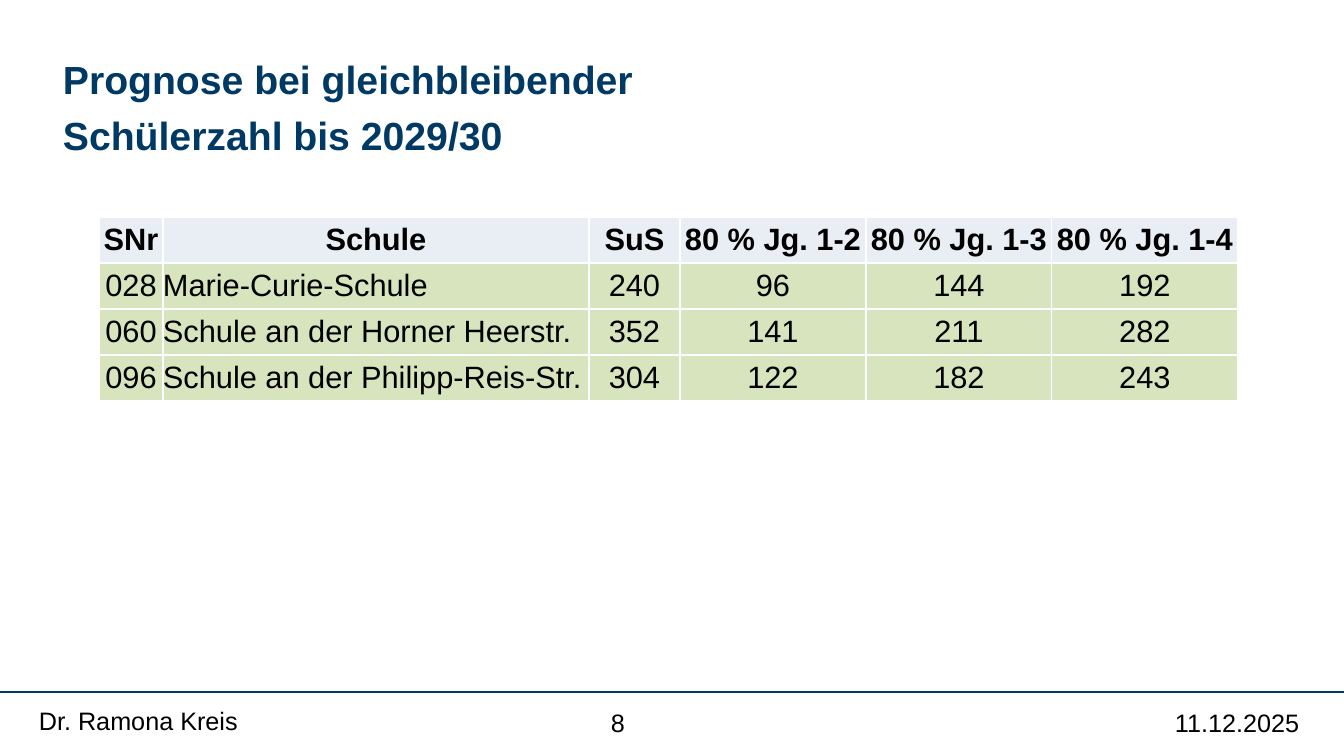
from lxml import etree
from pptx import Presentation
from pptx import util as u
from pptx.dml.color import RGBColor
from pptx.enum import shapes, text
from pptx.oxml import ns

PX = 914400 / 100.8
COLORS = {"navy": "003964", "black": "000000", "white": "FFFFFF",
          "header": "E9EDF4", "green": "D7E4BD"}


def px(value):
    return u.Emu(round(value * PX))


def write(frame, content, size=18, color="black", bold=False, align=text.PP_ALIGN.LEFT, gap=0):
    for index, line in enumerate(content.split("\n")):
        paragraph = frame.add_paragraph() if index else frame.paragraphs[0]
        paragraph.alignment = align
        if index:
            paragraph.space_before = u.Pt(gap)
        run = paragraph.add_run()
        run.text = line
        run.font.name = "Arial"
        run.font.size = u.Pt(size)
        run.font.bold = bold
        run.font.color.rgb = RGBColor.from_string(COLORS[color])


presentation = Presentation()
presentation.slide_width, presentation.slide_height = px(1344), px(756)
slide = presentation.slides.add_slide(presentation.slide_layouts[6])

footer_line = slide.shapes.add_connector(
    shapes.MSO_CONNECTOR.STRAIGHT, px(0), px(692), px(1344), px(692))
footer_line.line.color.rgb = RGBColor.from_string(COLORS["navy"])
footer_line.line.width = u.Pt(1)
etree.SubElement(footer_line._element.spPr, ns.qn("a:effectLst"))

title_format = {"size": 28, "color": "navy", "bold": True, "gap": 6.5}
text_boxes = [
    ("11.12.2025", (1165, 702, 161, 44), True, {}),
    ("8", (601, 702, 70, 40), False, {}),
    ("Dr. Ramona Kreis", (29, 700, 310, 44), True, {}),
    ("Prognose bei gleichbleibender\nSchülerzahl bis 2029/30", (53, 50, 830, 61), True, title_format),
]
for content, bounds, wrap, text_format in text_boxes:
    box = slide.shapes.add_textbox(*map(px, bounds))
    box.text_frame.word_wrap = wrap
    write(box.text_frame, content, **text_format)

school_rows = [
    ["SNr", "Schule", "SuS", "80 % Jg. 1-2", "80 % Jg. 1-3", "80 % Jg. 1-4"],
    ["028", "Marie-Curie-Schule", "240", "96", "144", "192"],
    ["060", "Schule an der Horner Heerstr.", "352", "141", "211", "282"],
    ["096", "Schule an der Philipp-Reis-Str.", "304", "122", "182", "243"],
]
column_widths = [64, 426, 91, 186, 186, 186]
row_height = 46
table = slide.shapes.add_table(
    len(school_rows), len(column_widths), px(99), px(217),
    px(sum(column_widths)), px(row_height * len(school_rows))).table
for column, width in zip(table.columns, column_widths):
    column.width = px(width)

for row_index, values in enumerate(school_rows):
    table.rows[row_index].height = px(row_height)
    is_header = row_index == 0
    for column_index, value in enumerate(values):
        cell = table.cell(row_index, column_index)
        cell.margin_left = cell.margin_right = cell.margin_top = cell.margin_bottom = 0
        cell.vertical_anchor = text.MSO_ANCHOR.MIDDLE
        is_name = column_index == 1 and not is_header
        write(cell.text_frame, value, size=22, bold=is_header,
              align=text.PP_ALIGN.LEFT if is_name else text.PP_ALIGN.CENTER)
        properties = cell._tc.get_or_add_tcPr()
        for side in ("lnL", "lnR", "lnT", "lnB"):
            border = etree.SubElement(properties, ns.qn(f"a:{side}"), w=str(u.Pt(1)))
            border_fill = etree.SubElement(border, ns.qn("a:solidFill"))
            etree.SubElement(border_fill, ns.qn("a:srgbClr"), val=COLORS["white"])
        cell.fill.solid()
        cell.fill.fore_color.rgb = RGBColor.from_string(COLORS["header" if is_header else "green"])

presentation.save("out.pptx")
